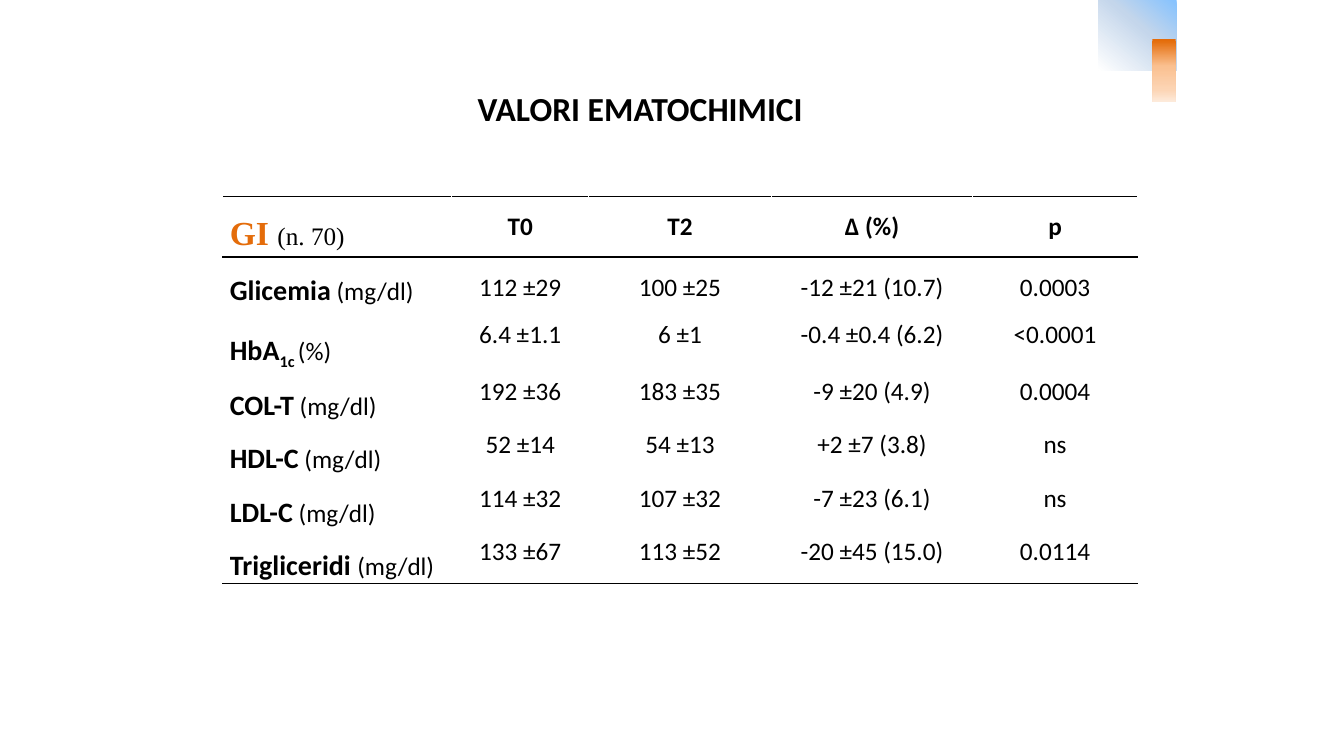
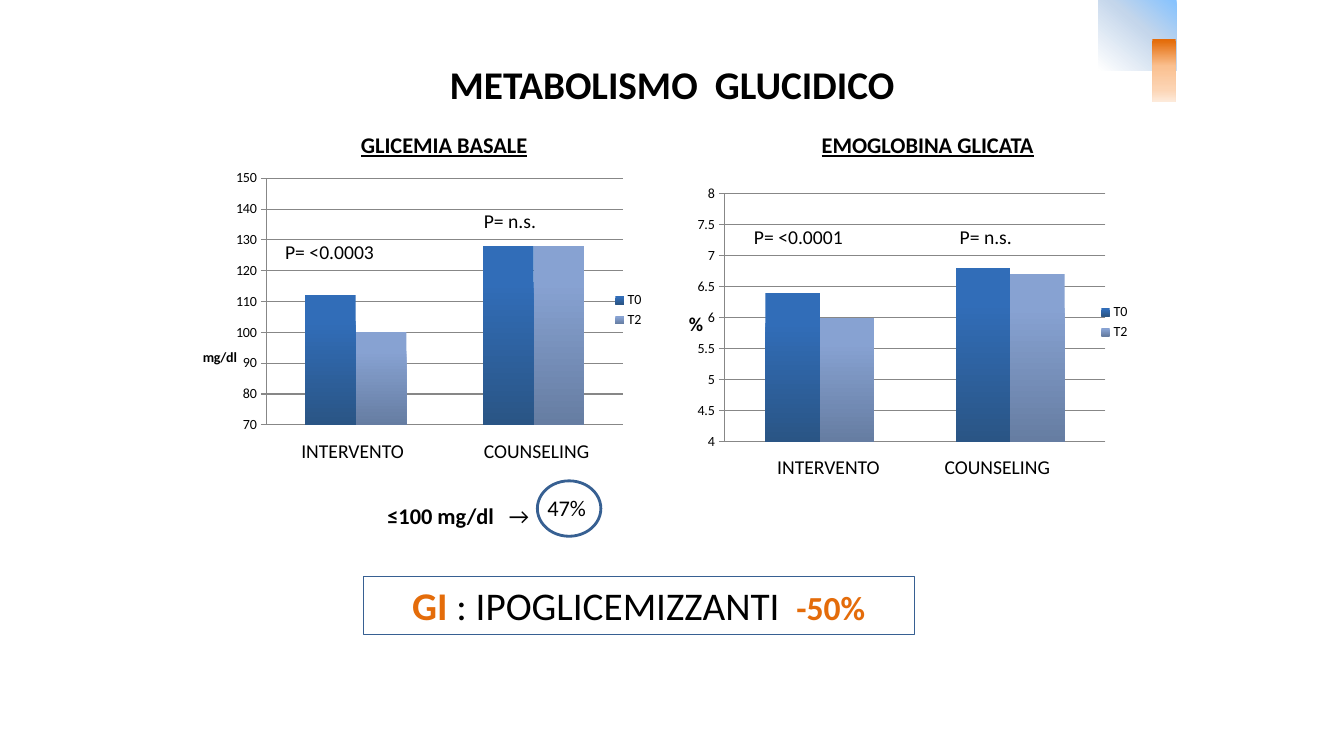
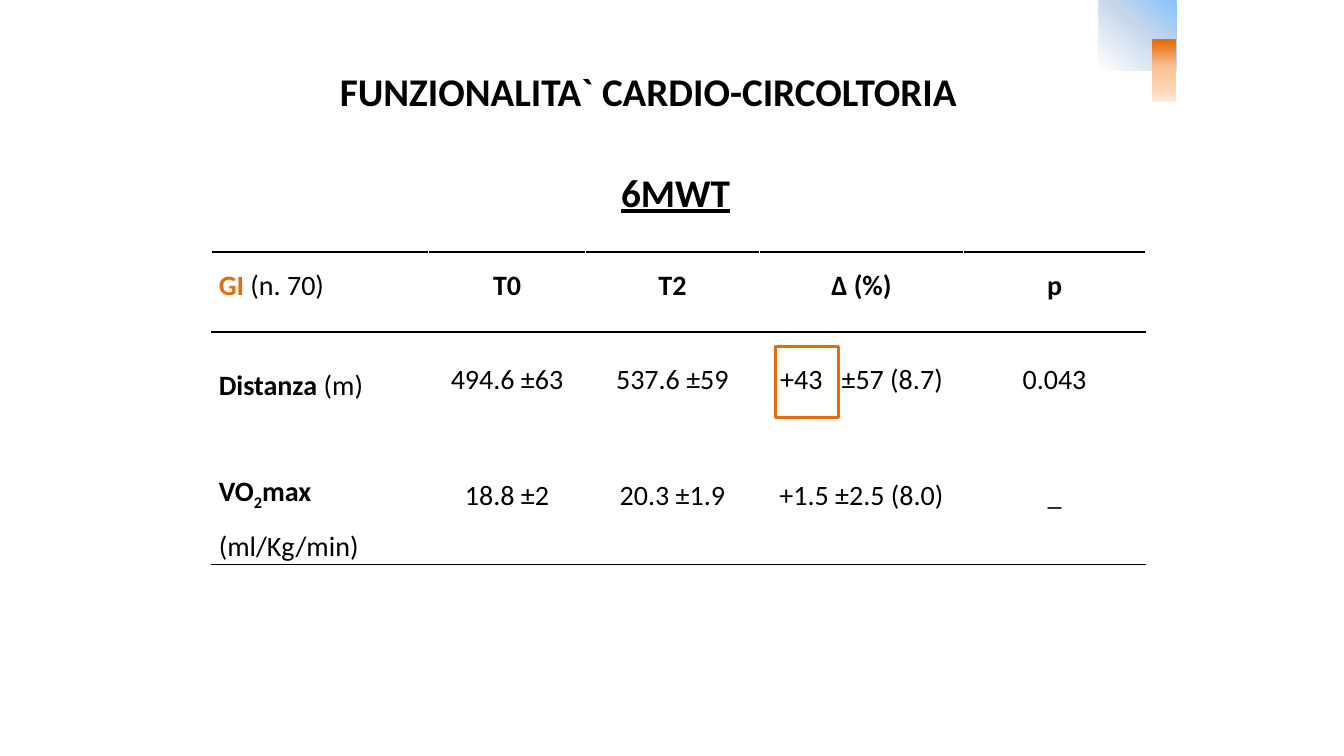
import lxml.etree
import pptx
import pptx.chart.data
import pptx.dml.color
import pptx.enum.chart
import pptx.enum.shapes
import pptx.enum.text
import pptx.oxml.ns
import pptx.util

Inches = pptx.util.Inches
Pt = pptx.util.Pt
RGBColor = pptx.dml.color.RGBColor
qn = pptx.oxml.ns.qn
SubElement = lxml.etree.SubElement
SHAPE = pptx.enum.shapes.MSO_SHAPE
ALIGN = pptx.enum.text.PP_ALIGN
ANCHOR = pptx.enum.text.MSO_ANCHOR

BLACK = RGBColor(0x00, 0x00, 0x00)
WHITE = RGBColor(0xFF, 0xFF, 0xFF)
ORANGE = RGBColor(0xE4, 0x6C, 0x0A)
PEACH = RGBColor(0xFA, 0xC0, 0x90)
LIGHT_PEACH = RGBColor(0xFC, 0xD5, 0xB5)
PALE_PEACH = RGBColor(0xFD, 0xEA, 0xDA)
SKY = RGBColor(0x85, 0xC2, 0xFF)
MIST = RGBColor(0xC4, 0xD6, 0xEB)
OUTLINE_BLUE = RGBColor(0x37, 0x60, 0x92)
GRID_GRAY = RGBColor(0x87, 0x87, 0x87)
T0_TOP = RGBColor(0x31, 0x6D, 0xB8)
T0_BOTTOM = RGBColor(0x2A, 0x55, 0x85)
T2_TOP = RGBColor(0x87, 0xA2, 0xD2)
T2_BOTTOM = RGBColor(0x66, 0x7D, 0xA2)


def write(frame, text, align=ALIGN.LEFT, line_spacing=None, after=None, **look):
    """Fill a frame with a string, or with (text, format) spans; look is the default format."""
    para = frame.paragraphs[0]
    para.alignment = align
    para.line_spacing = line_spacing
    para.space_after = after
    for words, own in [(text, {})] if isinstance(text, str) else text:
        form = {**look, **own}
        span = para.add_run()
        span.text = words
        span.font.name = form.get("font", "Calibri")
        span.font.size = Pt(form["size"])
        span.font.bold = form.get("bold", False)
        span.font.underline = form.get("underline", False)
        span.font.color.rgb = form.get("color", BLACK)
        for attribute, key in (("baseline", "baseline"), ("spc", "tracking")):
            if key in form:
                span.font._element.set(attribute, str(form[key]))


def paint_gradient(fill, element, stops, angle):
    """Give a fill (percent, colour) stops along a clockwise angle."""
    fill.gradient()
    fill.gradient_angle = 360 - angle
    stop_list = next(element.iter(qn("a:gsLst")))
    stop_list.clear()
    for percent, color in stops:
        stop = SubElement(stop_list, qn("a:gs"), pos=str(percent * 1000))
        SubElement(stop, qn("a:srgbClr"), val=str(color))


deck = pptx.Presentation()
deck.slide_width = Inches(13.33)
deck.slide_height = Inches(7.5)

# Titles and corner decoration of every page
titles = [
    ("VALORI EMATOCHIMICI", 24, (3.91, 0.82, 4.88, 0.5)),
    ([("METABOLISMO", {}), (" ", {"tracking": 600}), ("GLUCIDICO", {})], 28,
     (4.01, 0.55, 5.31, 0.57)),
    ("FUNZIONALITA` CARDIO-CIRCOLTORIA", 28, (2.65, 0.62, 7.56, 0.57)),
]
corner = [
    ((10.89, 0, 0.78, 0.7), [(0, SKY), (41, MIST), (100, WHITE)], 130),
    ((11.43, 0.39, 0.23, 0.62),
     [(2, ORANGE), (43, PEACH), (81, LIGHT_PEACH), (100, PALE_PEACH)], 90),
]
pages = []
for text, size, place in titles:
    page = deck.slides.add_slide(deck.slide_layouts[5])
    pages.append(page)
    title = page.shapes.title
    title.left, title.top, title.width, title.height = map(Inches, place)
    title.text_frame.vertical_anchor = ANCHOR.TOP
    write(title.text_frame, text, align=ALIGN.CENTER, size=size, bold=True)
    for place, stops, angle in corner:
        block = page.shapes.add_shape(SHAPE.RECTANGLE, *map(Inches, place))
        block.shadow.inherit = False
        block.line.fill.background()
        paint_gradient(block.fill, block._element, stops, angle)
blood_page, glucose_page, cardio_page = pages

# Tables
STRONG = {"bold": True, "size": 20}
SUBSCRIPT = {**STRONG, "baseline": -25000}
HEADINGS = ["T0", "T2", "∆ (%)", "p"]
blood_rows = [
    [[("GI ", {"size": 24, "bold": True, "color": ORANGE, "font": "Times New Roman"}),
      ("(n. 70)", {"font": "Times New Roman"})], *HEADINGS],
    [[("Glicemia", STRONG), (" (mg/dl)", {})],
     "112 ±29", "100 ±25", "-12 ±21 (10.7)", "0.0003"],
    [[("HbA", STRONG), ("1c", SUBSCRIPT), (" ", {"baseline": -25000}), ("(%)", {})],
     "6.4 ±1.1", "6 ±1", "-0.4 ±0.4 (6.2)", "<0.0001"],
    [[("COL-T", STRONG), (" (mg/dl)", {})],
     "192 ±36", "183 ±35", "-9 ±20 (4.9)", "0.0004"],
    [[("HDL-C", STRONG), (" (mg/dl)", {})],
     "52 ±14", "54 ±13", "+2 ±7 (3.8)", "ns"],
    [[("LDL-C", STRONG), (" (mg/dl)", {})],
     "114 ±32", "107 ±32", "-7 ±23 (6.1)", "ns"],
    [[("Trigliceridi ", STRONG), ("(mg/dl)", {})],
     "133 ±67", "113 ±52", "-20 ±45 (15.0)", "0.0114"],
]
cardio_rows = [
    [[("GI ", {**STRONG, "color": ORANGE}), ("(n. 70)", {})], *HEADINGS],
    [[("Distanza ", STRONG), ("(m)", {})], "494.6 ±63", "537.6 ±59",
     [("+43", {}), (" ", {"tracking": 900}), ("±57 (8.7)", {})], "0.043"],
    [[("VO", STRONG), ("2", SUBSCRIPT), ("max ", STRONG), ("(ml/Kg/min)", {})],
     "18.8 ±2", "20.3 ±1.9", "+1.5 ±2.5 (8.0)", "_"],
]
# page, rows, left, top, widths, heights, text size, open-spaced rows, header rule, anchor
tables = [
    (blood_page, blood_rows, 2.21, 1.95, [2.27, 1.36, 1.81, 2, 1.63],
     [0.6, 0.57, 0.53, 0.53, 0.53, 0.53, 0.51], 18, 2, 1, ANCHOR.TOP),
    (cardio_page, cardio_rows, 2.1, 2.5, [2.15, 1.56, 1.72, 2.03, 1.8],
     [0.79, 0.9, 1.41], 20, 1, 1.5, ANCHOR.MIDDLE),
]
for page, rows, left, top, widths, heights, size, open_rows, header_rule, anchor in tables:
    table = page.shapes.add_table(
        len(rows), len(widths), Inches(left), Inches(top),
        Inches(sum(widths)), Inches(sum(heights))).table
    table.first_row = table.horz_banding = False
    for column, width in zip(table.columns, widths):
        column.width = Inches(width)
    last = len(rows) - 1
    for r, values in enumerate(rows):
        table.rows[r].height = Inches(heights[r])
        for c, text in enumerate(values):
            cell = table.cell(r, c)
            cell.margin_left = cell.margin_right = Inches(0.07)
            cell.margin_top = cell.margin_bottom = 0
            cell.vertical_anchor = anchor if r else ANCHOR.TOP
            if c == 0 and r == last and anchor == ANCHOR.MIDDLE:
                cell.vertical_anchor = ANCHOR.BOTTOM
            spread = c == 0 or r < open_rows
            write(cell.text_frame, text, size=size, bold=r == 0 and c > 0,
                  align=ALIGN.CENTER if c else ALIGN.LEFT,
                  line_spacing=1.5 if spread else 1.15,
                  after=None if spread else Pt(10))
            # Black rules above and below the header and under the last row
            borders = [
                ("a:lnL", WHITE, 1), ("a:lnR", WHITE, 1),
                ("a:lnT", BLACK if r < 2 else WHITE, header_rule if r < 2 else 1),
                ("a:lnB", BLACK if r in (0, last) else WHITE, 1 if r else header_rule),
            ]
            for tag, color, weight in borders:
                line = SubElement(cell._tc.get_or_add_tcPr(), qn(tag), w=str(Pt(weight)))
                solid = SubElement(line, qn("a:solidFill"))
                SubElement(solid, qn("a:srgbClr"), val=str(color))
            cell.fill.background()

# Column charts: place, T0, T2, axis limits and step, unit, unit size, unit spot, plot area
charts = [
    ((1.94, 1.62, 4.55, 2.91), (112, 128), (100, 128), (70, 150, 10),
     "mg/dl", 10, (0.01, 0.62), (0.155, 0.051, 0.776, 0.841)),
    ((6.75, 1.7, 4.56, 2.99), (6.4, 6.8), (6, 6.7), (4, 8, 0.5),
     "%", 14, (0.01, 0.45), (0.096, 0.074, 0.828, 0.823)),
]
for place, before, later, limits, unit, unit_size, unit_spot, plot_area in charts:
    data = pptx.chart.data.CategoryChartData()
    data.categories = ["1", "2"]
    data.add_series("T0", before)
    data.add_series("T2", later)
    chart = glucose_page.shapes.add_chart(
        pptx.enum.chart.XL_CHART_TYPE.COLUMN_CLUSTERED, *map(Inches, place), data).chart
    chart.has_title = False
    chart.font.name = "Calibri"
    chart.font.size = Pt(10)
    chart.font.color.rgb = BLACK
    chart.has_legend = True
    chart.legend.position = pptx.enum.chart.XL_LEGEND_POSITION.RIGHT
    chart.legend.include_in_layout = False
    plot = chart.plots[0]
    plot.vary_by_categories = False
    plot.gap_width = 150
    plot.overlap = 0
    for series, top, bottom in zip(plot.series, (T0_TOP, T2_TOP), (T0_BOTTOM, T2_BOTTOM)):
        paint_gradient(series.format.fill, series._element,
                       [(0, top), (20, top), (100, bottom)], 90)
    chart.category_axis.visible = False
    axis = chart.value_axis
    axis.minimum_scale, axis.maximum_scale, axis.major_unit = limits
    axis.major_tick_mark = pptx.enum.chart.XL_TICK_MARK.OUTSIDE
    axis.has_major_gridlines = True
    for line in (axis.format.line, axis.major_gridlines.format.line):
        line.color.rgb = GRID_GRAY
        line.width = Pt(0.75)
    unit_frame = axis.axis_title.text_frame
    write(unit_frame, unit, size=unit_size, bold=True)
    unit_frame._txBody.find(qn("a:bodyPr")).set("rot", "0")
    # Fixed places for the plot area and the unit
    plot_element = chart._chartSpace.chart.plotArea
    for parent, index, spot in ((plot_element, 0, plot_area),
                                (axis.axis_title._element, 1, unit_spot)):
        for old in parent.findall(qn("c:layout")):
            parent.remove(old)
        layout = lxml.etree.Element(qn("c:layout"))
        parent.insert(index, layout)
        manual = SubElement(layout, qn("c:manualLayout"))
        if parent is plot_element:
            SubElement(manual, qn("c:layoutTarget"), val="inner")
        for mode in ("c:xMode", "c:yMode"):
            SubElement(manual, qn(mode), val="edge")
        for side, value in zip("xywh", spot):
            SubElement(manual, qn("c:" + side), val=str(value))

# Outlined shapes
outlines = [
    (glucose_page, SHAPE.OVAL, (5.33, 4.77, 0.63, 0.55), OUTLINE_BLUE, 2, []),
    (glucose_page, SHAPE.RECTANGLE, (3.6, 5.72, 5.47, 0.57), OUTLINE_BLUE, 0.5,
     [("GI", {"bold": True, "color": ORANGE}), (" : IPOGLICEMIZZANTI", {}),
      (" ", {"size": 18, "tracking": 800}),
      ("-50%", {"size": 24, "bold": True, "color": ORANGE})]),
    (cardio_page, SHAPE.RECTANGLE, (7.69, 3.44, 0.63, 0.7), ORANGE, 2, []),
]
for page, kind, place, color, weight, text in outlines:
    outline = page.shapes.add_shape(kind, *map(Inches, place))
    outline.shadow.inherit = False
    outline.fill.background()
    outline.line.color.rgb = color
    outline.line.width = Pt(weight)
    outline.text_frame.vertical_anchor = ANCHOR.TOP
    write(outline.text_frame, text, align=ALIGN.CENTER, size=28)

# Headings and chart labels
HEADING = {"size": 16, "bold": True, "underline": True, "align": ALIGN.CENTER}
LABEL = {"size": 14}
labels = [
    (glucose_page, "GLICEMIA BASALE", (3.39, 1.25, 2.03, 0.37), HEADING),
    (glucose_page, "EMOGLOBINA GLICATA", (7.99, 1.25, 2.42, 0.37), HEADING),
    (glucose_page, "INTERVENTO", (2.89, 4.3, 1.34, 0.31), LABEL),
    (glucose_page, "COUNSELING", (4.7, 4.3, 1.34, 0.31), LABEL),
    (glucose_page, "INTERVENTO", (7.61, 4.46, 1.34, 0.31), LABEL),
    (glucose_page, "COUNSELING", (9.27, 4.46, 1.34, 0.31), LABEL),
    (glucose_page, "P= <0.0003", (2.73, 2.33, 1.2, 0.39), LABEL),
    (glucose_page, "P= n.s.", (4.7, 2.02, 1.2, 0.39), LABEL),
    (glucose_page, "P= <0.0001", (7.38, 2.18, 1.2, 0.39), LABEL),
    (glucose_page, "P= n.s.", (9.42, 2.18, 1.2, 0.39), LABEL),
    (glucose_page, "47%", (5.33, 4.85, 0.62, 0.37), {"size": 16}),
    (glucose_page, [("≤100 mg/dl", {"bold": True}), (" ", {"tracking": 700}), ("→ ", {})],
     (3.67, 4.93, 1.8, 0.37), {"size": 16, "align": ALIGN.CENTER}),
    (cardio_page, "6MWT", (5.8, 1.62, 1.8, 0.57), {**HEADING, "size": 28}),
]
for page, text, place, look in labels:
    box = page.shapes.add_textbox(*map(Inches, place))
    box.text_frame.word_wrap = True
    write(box.text_frame, text, **look)

deck.save("out.pptx")
